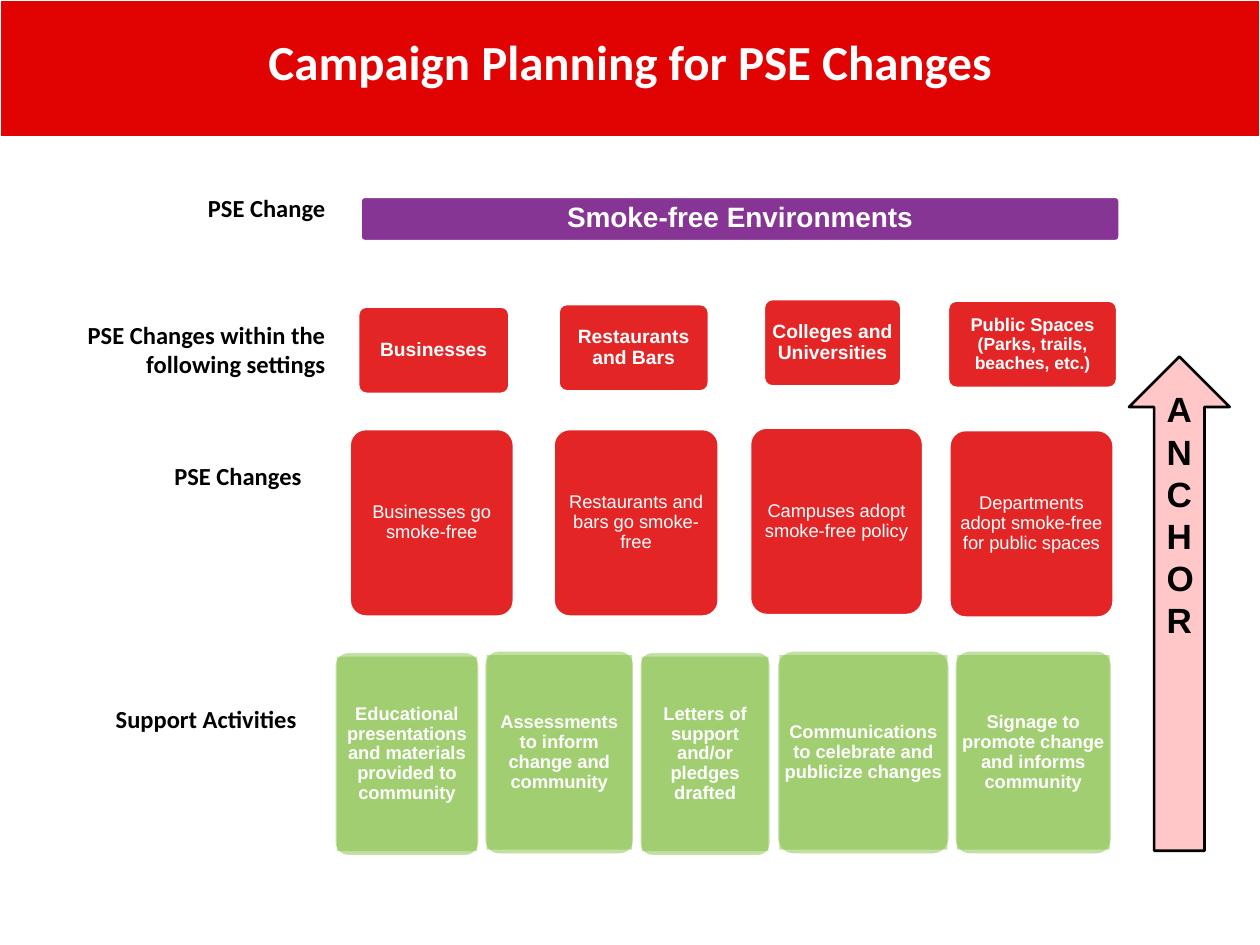
from lxml.etree import SubElement
from pptx import Presentation
from pptx.dml.color import RGBColor
from pptx.enum.shapes import MSO_SHAPE as SHAPE
from pptx.enum.text import MSO_ANCHOR as ANCHOR, MSO_AUTO_SIZE as AUTO, PP_ALIGN as ALIGN
from pptx.oxml.ns import qn
from pptx.util import Cm, Pt

WHITE, BLACK = "FFFFFF", "000000"
BANNER, PURPLE, RED, GREEN, PINK = "E10202", "873594", "E32526", "81BE41", "FFC7C7"

SETTINGS = [
    (0, 0.15, 3.07, [("Businesses", 11)]),
    (4.04, 0.1, 3.05, [("Restaurants and Bars", 11)]),
    (8.18, 0, 2.79, [("Colleges and Universities", 11)]),
    (11.89, 0.03, 3.43, [("Public Spaces ", 10.5), ("(Parks, trails, beaches, etc.)", 10)]),
]
CHANGES = [
    (0, 0.03, 3.33, [("Businesses go smoke-free", 10.5)]),
    (4.11, 0.03, 3.35, [("Restaurants and bars go smoke-free", 10.5)]),
    (8.07, 0, 3.51, [("Campuses adopt smoke-free policy", 10.5)]),
    (12.09, 0.05, 3.33, [("Departments adopt smoke-free for public spaces", 10.5)]),
]
ACTIVITIES = [
    (0, 0.03, 2.95, [("Educational presentations and materials provided to community", 10.5)]),
    (3.02, 0, 3.05, [("Assessments to inform change and community", 10.5)]),
    (6.15, 0.03, 2.67, [("Letters of support and/or pledges drafted", 10.5)]),
    (8.92, 0, 3.51, [("Communications to celebrate and publicize changes", 10.5)]),
    (12.5, 0, 3.2, [("Signage to promote change and informs community", 10.5)]),
]


def rgb(value):
    """Turn a hex string into a colour."""
    return RGBColor.from_string(value)


def set_font(font, name, color, bold=True, size=None):
    """Set the face, colour, weight and, if given, size of a font."""
    font.name, font.bold = name, bold
    font.color.rgb = rgb(color)
    if size:
        font.size = Pt(size)


def add_block(s, kind, box, fill, line=None, width=2, alpha=None):
    """Add a filled shape in a box of centimetres."""
    sp = s.shapes.add_shape(kind, *map(Cm, box))
    sp.shadow.inherit = False
    sp.fill.solid()
    sp.fill.fore_color.rgb = rgb(fill)
    if alpha:
        color = sp.element.spPr.find(".//" + qn("a:srgbClr"))
        SubElement(color, qn("a:alpha"), val=str(alpha * 1000))
    if line:
        sp.line.color.rgb = rgb(line)
        sp.line.width = Pt(width)
    else:
        sp.line.fill.background()
    if kind == SHAPE.ROUNDED_RECTANGLE:
        sp.adjustments[0] = 0.1
    return sp


def write_card(sp, runs, bold=True):
    """Write centred white runs of (text, size) into a card."""
    tf = sp.text_frame
    tf.word_wrap = True
    tf.vertical_anchor = ANCHOR.MIDDLE
    tf.margin_left = tf.margin_right = tf.margin_top = tf.margin_bottom = Cm(0.1)
    p = tf.paragraphs[0]
    p.alignment, p.line_spacing = ALIGN.CENTER, 0.9
    set_font(p.font, "Arial", WHITE, bold)
    for text, size in runs:
        r = p.add_run()
        r.text = text
        r.font.size = Pt(size)


def add_title(s, box, text):
    """Place the title over its red banner."""
    band = add_block(s, SHAPE.RECTANGLE, box, BANNER, WHITE, 0.75)
    s.shapes.title.element.addprevious(band.element)
    title = s.shapes.title
    title.left, title.top, title.width, title.height = map(Cm, box)
    tf = title.text_frame
    tf.text = text
    tf.word_wrap, tf.auto_size = True, AUTO.NONE
    tf.vertical_anchor = ANCHOR.MIDDLE
    p = tf.paragraphs[0]
    p.alignment, p.line_spacing = ALIGN.CENTER, 0.7
    set_font(p.font, "Calibri", WHITE, size=28)


def add_label(s, box, text):
    """Add a right-aligned row label."""
    tf = s.shapes.add_textbox(*map(Cm, box)).text_frame
    tf.word_wrap = True
    tf.text = text
    p = tf.paragraphs[0]
    p.alignment = ALIGN.RIGHT
    set_font(p.font, "Calibri", BLACK, size=14)


def add_red_row(s, box, cards, bold):
    """Add a row of red cards offset from the corner of the box."""
    x, y, height = box
    for dx, dy, width, runs in cards:
        card = add_block(s, SHAPE.ROUNDED_RECTANGLE, (x + dx, y + dy, width, height), RED, WHITE)
        write_card(card, runs, bold)


def add_green_row(s, box, cards):
    """Add a row of layered translucent green cards."""
    x, y, height = box
    for dx, dy, width, runs in cards:
        left, top = x + dx, y + dy
        add_block(s, SHAPE.ROUNDED_RECTANGLE, (left, top, width, height), GREEN, WHITE, alpha=49)
        panel = (left + 0.06, top + 0.11, width - 0.12, height - 0.22)
        write_card(add_block(s, SHAPE.RECTANGLE, panel, GREEN, alpha=49), runs)


def add_anchor(s, box, text):
    """Add the up arrow whose narrow shaft stacks the letters."""
    sp = add_block(s, SHAPE.UP_ARROW, box, PINK, BLACK, 1.5)
    tf = sp.text_frame
    tf.word_wrap = True
    tf.vertical_anchor = ANCHOR.TOP
    tf.text = text
    p = tf.paragraphs[0]
    p.alignment = ALIGN.LEFT
    set_font(p.font, "Arial", BLACK, size=20)


def main():
    """Build and save the slide."""
    prs = Presentation()
    prs.slide_width, prs.slide_height = Cm(25.4), Cm(19.05)
    s = prs.slides.add_slide(prs.slide_layouts[5])
    add_title(s, (0, 0, 25.4, 2.75), "Campaign Planning for PSE Changes")

    goal = add_block(s, SHAPE.ROUNDED_RECTANGLE, (7.26, 3.96, 15.32, 0.91), PURPLE, WHITE)
    write_card(goal, [("Smoke-free Environments", 16)])
    add_red_row(s, (7.21, 6.02, 1.78), SETTINGS, True)
    add_red_row(s, (7.04, 8.61, 3.8), CHANGES, False)
    add_green_row(s, (6.73, 13.1, 4.14), ACTIVITIES)

    add_label(s, (0.28, 3.76, 6.53, 0.86), "PSE Change")
    add_label(s, (0, 6.32, 6.81, 1.45), "PSE Changes within the following settings")
    add_label(s, (0.28, 9.17, 6.05, 0.86), "PSE Changes")
    add_label(s, (1.4, 14.07, 4.83, 0.86), "Support Activities")
    add_anchor(s, (22.76, 7.19, 2.03, 9.96), "ANCHOR")
    prs.save("out.pptx")


if __name__ == "__main__":
    main()
